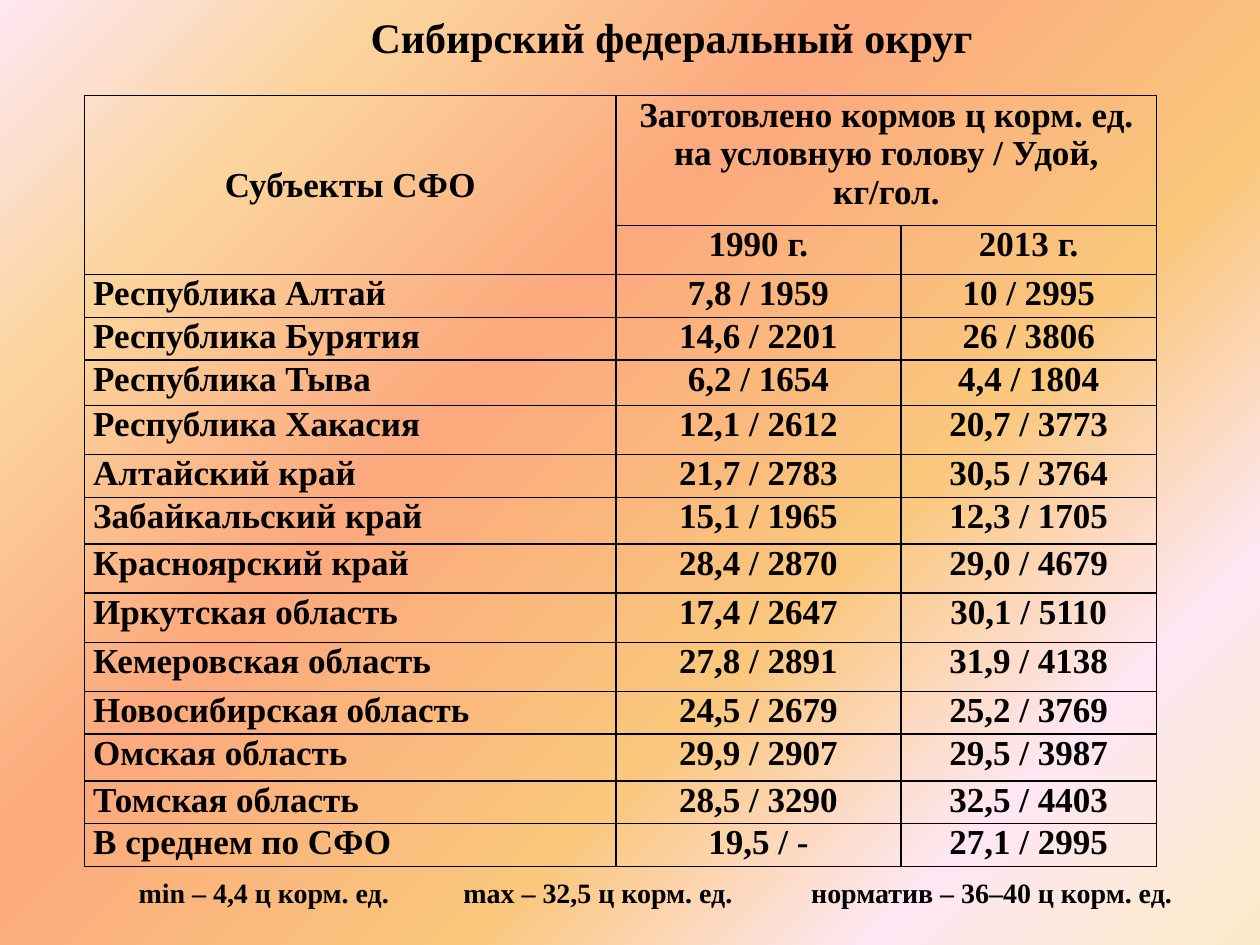
from lxml import etree
from pptx import Presentation
from pptx.dml.color import RGBColor
from pptx.enum.text import MSO_ANCHOR, PP_ALIGN
from pptx.oxml.ns import qn
from pptx.util import Inches, Pt

LEFT, CENTER, JUSTIFY = PP_ALIGN.LEFT, PP_ALIGN.CENTER, PP_ALIGN.JUSTIFY
TOP, MIDDLE = MSO_ANCHOR.TOP, MSO_ANCHOR.MIDDLE
COLUMNS, ROWS = 100, 75

GRADIENT = [(0, "FEE7F2"), (18, "FBD49C"), (39, "FBA97D"),
            (64, "FAC77D"), (82, "FEE7F2"), (100, "FBEAC7")]
COLUMN_WIDTHS = [42.2, 22.6, 20.3]
ROW_HEIGHTS = [10.3, 3.9, 3.4, 3.4, 3.6, 3.9, 3.4, 3.7,
               3.9, 3.9, 3.9, 3.4, 3.7, 3.4, 3.4]
HEADER = [
    ("Субъекты СФО", "Заготовлено кормов ц корм. ед.\nна условную голову / Удой, кг/гол.", ""),
    ("", "1990 г.", "2013 г."),
]
REGIONS = [
    ("Республика Алтай", "7,8 / 1959", "10 / 2995"),
    ("Республика Бурятия", "14,6 / 2201", "26 / 3806"),
    ("Республика Тыва", "6,2 / 1654", "4,4 / 1804"),
    ("Республика Хакасия", "12,1 / 2612", "20,7 / 3773"),
    ("Алтайский край", "21,7 / 2783", "30,5 / 3764"),
    ("Забайкальский край", "15,1 / 1965", "12,3 / 1705"),
    ("Красноярский край", "28,4 / 2870", "29,0 / 4679"),
    ("Иркутская область", "17,4 / 2647", "30,1 / 5110"),
    ("Кемеровская область", "27,8 / 2891", "31,9 / 4138"),
    ("Новосибирская область", "24,5 / 2679", "25,2 / 3769"),
    ("Омская область", "29,9 / 2907", "29,5 / 3987"),
    ("Томская область", "28,5 / 3290", "32,5 / 4403"),
    ("В среднем по СФО", "19,5 / -", "27,1 / 2995"),
]


def color(value):
    return RGBColor.from_string(value)


class SlideBuilder:
    """Holds the text style, the grid and the current slide."""

    font_name = "Times New Roman"
    ink = "000000"

    def __init__(self, presentation):
        self.slide = presentation.slides.add_slide(presentation.slide_layouts[6])
        self.column = presentation.slide_width / COLUMNS
        self.row = presentation.slide_height / ROWS

    def across(self, columns):
        return round(columns * self.column)

    def down(self, rows):
        return round(rows * self.row)

    def place(self, left, top, width, height):
        return self.across(left), self.down(top), self.across(width), self.down(height)

    def background(self, stops):
        fill = self.slide.background.fill
        fill.gradient()
        fill.gradient_angle = 315
        stop_list = self.slide.element.find(".//" + qn("a:gsLst"))
        for stop in list(stop_list):
            stop_list.remove(stop)
        for position, value in stops:
            stop = etree.SubElement(stop_list, qn("a:gs"), pos=str(position * 1000))
            etree.SubElement(stop, qn("a:srgbClr"), val=value)

    def fill_text(self, frame, text, size, align):
        frame.text = text
        for paragraph in frame.paragraphs:
            paragraph.alignment = align
            font = paragraph.font
            font.name, font.size, font.bold = self.font_name, Pt(size), True
            font.color.rgb = color(self.ink)

    def text(self, text, box, size, align=LEFT, anchor=TOP, inset=1, wrap=True):
        frame = self.slide.shapes.add_textbox(*self.place(*box)).text_frame
        frame.word_wrap = wrap
        frame.vertical_anchor = anchor
        frame.margin_left = self.across(inset)
        self.fill_text(frame, text, size, align)

    def border(self, cell, width=1):
        properties = cell._tc.get_or_add_tcPr()
        for index, side in enumerate(("a:lnL", "a:lnR", "a:lnT", "a:lnB")):
            line = etree.Element(qn(side), w=str(Pt(width)))
            fill = etree.SubElement(line, qn("a:solidFill"))
            etree.SubElement(fill, qn("a:srgbClr"), val=self.ink)
            properties.insert(index, line)

    def table(self, rows, left, top, widths, heights, size, header_rows):
        box = self.place(left, top, sum(widths), sum(heights))
        table = self.slide.shapes.add_table(len(rows), len(widths), *box).table
        table.first_row = table.horz_banding = False
        for column, width in zip(table.columns, widths):
            column.width = self.across(width)
        for row, height in zip(table.rows, heights):
            row.height = self.down(height)
        for row_index, values in enumerate(rows):
            for column_index, value in enumerate(values):
                cell = table.cell(row_index, column_index)
                cell.fill.background()
                cell.margin_left = cell.margin_right = Inches(0.07)
                cell.margin_top = cell.margin_bottom = 0
                is_name = column_index == 0 and row_index >= header_rows
                self.fill_text(cell.text_frame, value, size, JUSTIFY if is_name else CENTER)
                self.border(cell)
        return table


def main():
    presentation = Presentation()
    presentation.slide_width, presentation.slide_height = Inches(10), Inches(7.5)
    builder = SlideBuilder(presentation)
    builder.background(GRADIENT)
    builder.text("Сибирский федеральный округ", (18.5, 1.3, 63, 3.2), 24,
                 CENTER, MIDDLE, inset=7.6)

    table = builder.table(HEADER + REGIONS, 6.7, 7.6, COLUMN_WIDTHS, ROW_HEIGHTS,
                          20, len(HEADER))
    subject = table.cell(0, 0)
    subject.merge(table.cell(1, 0))
    subject.vertical_anchor = MIDDLE
    table.cell(0, 1).merge(table.cell(0, 2))

    for text, left, width, inset, wrap in [
        ("min – 4,4 ц корм. ед.", 5.1, 29.9, 5.9, True),
        ("max – 32,5 ц корм. ед.", 35.8, 23.6, 1, False),
        ("норматив – 36–40 ц корм. ед.", 63.4, 31, 1, False),
    ]:
        builder.text(text, (left, 69, width, 3.7), 16, inset=inset, wrap=wrap)

    presentation.save("out.pptx")


if __name__ == "__main__":
    main()
